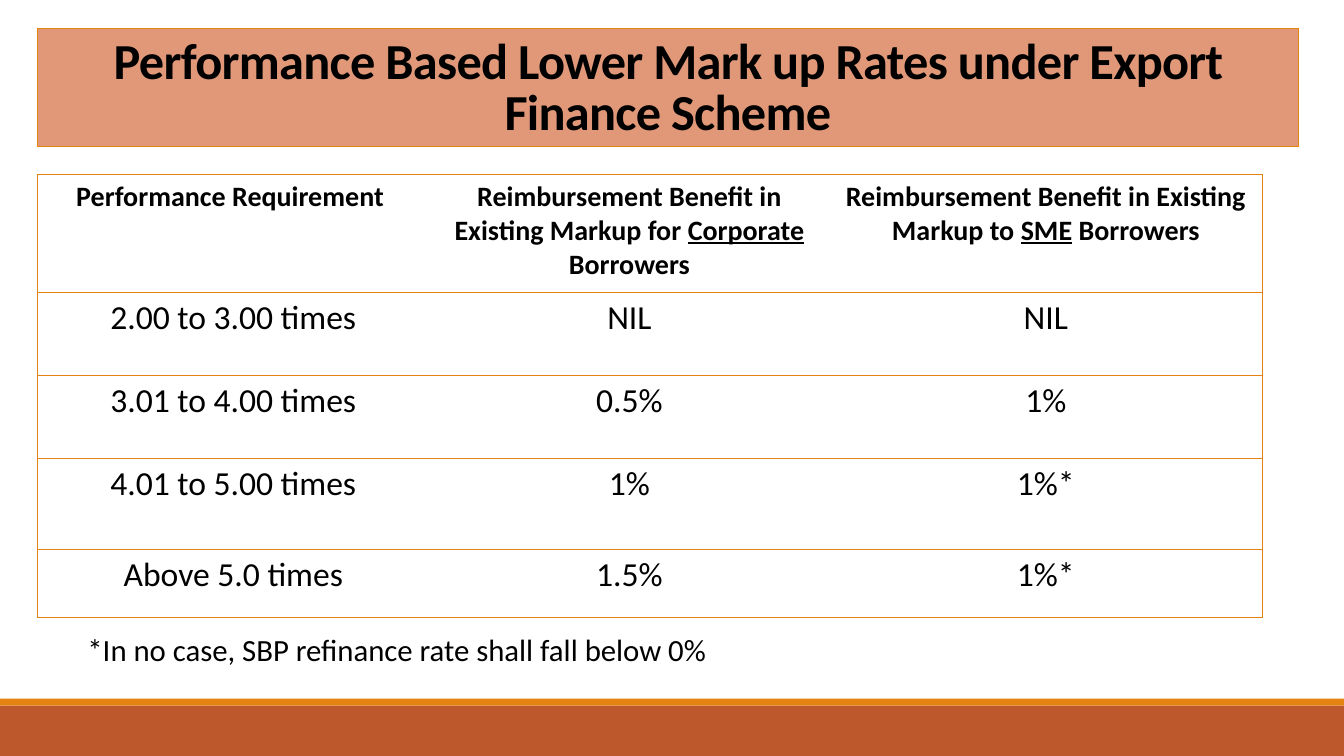
from lxml.etree import SubElement
from pptx import Presentation
from pptx.dml.color import RGBColor
from pptx.enum.shapes import MSO_SHAPE
from pptx.enum.text import MSO_ANCHOR, MSO_AUTO_SIZE, PP_ALIGN
from pptx.oxml.ns import qn
from pptx.util import Pt

ORANGE, RUST, SALMON = "E48312", "BD582C", "E09878"
BLACK, WHITE = "000000", "FFFFFF"


def paint(color_format, color):
    color_format.rgb = RGBColor.from_string(color)


def add_border(cell, side, color=None):
    """Draw a 1 pt line on one cell side (L, R, T, B), or none without a colour."""
    border = SubElement(cell._tc.get_or_add_tcPr(), qn(f"a:ln{side}"), w="12700")
    if color:
        fill = SubElement(border, qn("a:solidFill"))
        SubElement(fill, qn("a:srgbClr"), val=color)
    else:
        SubElement(border, qn("a:noFill"))


prs = Presentation()
prs.slide_width, prs.slide_height = Pt(960), Pt(540)
slide = prs.slides.add_slide(prs.slide_layouts[5])

# Footer bands
for top, height, color in [(504, 36, RUST), (499, 5, ORANGE)]:
    band = slide.shapes.add_shape(MSO_SHAPE.RECTANGLE, 0, Pt(top), Pt(960), Pt(height))
    band.shadow.inherit = False
    band.fill.solid()
    paint(band.fill.fore_color, color)
    band.line.fill.background()

# Heading
heading = slide.shapes.title
heading.left, heading.top, heading.width, heading.height = Pt(26.6), Pt(20.2), Pt(901), Pt(84.2)
heading.fill.solid()
paint(heading.fill.fore_color, SALMON)
paint(heading.line.color, ORANGE)
heading.line.width = Pt(0.75)
heading.text_frame.text = "Performance Based Lower Mark up Rates under Export Finance Scheme"
heading.text_frame.vertical_anchor = MSO_ANCHOR.BOTTOM
heading.text_frame.auto_size = MSO_AUTO_SIZE.NONE
heading_line = heading.text_frame.paragraphs[0]
heading_line.alignment = PP_ALIGN.CENTER
heading_line.line_spacing = 0.85
heading_line.font.size = Pt(36)
heading_line.font.bold = True
heading_line.font.name = "Calibri"
paint(heading_line.font.color, BLACK)
heading_line.runs[0].font._element.set("spc", "-50")

# Rates table: each cell is a list of runs, the second of which is underlined
rates = [
    [["Performance Requirement "],
     ["Reimbursement Benefit in Existing Markup for ", "Corporate", " Borrowers"],
     ["Reimbursement Benefit in Existing Markup to ", "SME", " Borrowers"]],
    [["2.00 to 3.00 times"], ["NIL"], ["NIL"]],
    [["3.01 to 4.00 times"], ["0.5%"], ["1%"]],
    [["4.01 to 5.00 times"], ["1%"], ["1%*"]],
    [["Above 5.0 times"], ["1.5%"], ["1%*"]],
]
column_widths = [280.1, 285.8, 309.1]
row_heights = [84.3, 59.3, 59.3, 65, 48.9]
table = slide.shapes.add_table(len(row_heights), len(column_widths), Pt(26.6), Pt(124.5),
                               Pt(sum(column_widths)), Pt(sum(row_heights))).table
table.first_row = table.horz_banding = False
for column, width in zip(table.columns, column_widths):
    column.width = Pt(width)
for row, height in zip(table.rows, row_heights):
    row.height = Pt(height)

for r, row in enumerate(rates):
    for c, pieces in enumerate(row):
        cell = table.cell(r, c)
        add_border(cell, "L", ORANGE if c == 0 else None)
        add_border(cell, "R", ORANGE if c == len(row) - 1 else None)
        add_border(cell, "T", ORANGE)
        add_border(cell, "B", ORANGE)
        cell.fill.solid()
        paint(cell.fill.fore_color, WHITE)
        entry = cell.text_frame.paragraphs[0]
        entry.alignment = PP_ALIGN.CENTER
        entry.font.name = "Calibri"
        entry.font.size = Pt(20 if r == 0 else 24)
        entry.font.bold = r == 0
        paint(entry.font.color, BLACK)
        for i, piece in enumerate(pieces):
            run = entry.add_run()
            run.text = piece
            if i == 1:
                run.font.underline = True

# Footnote
footnote = slide.shapes.add_textbox(Pt(55.4), Pt(447.1), Pt(634.3), Pt(33.8))
footnote.fill.solid()
paint(footnote.fill.fore_color, WHITE)
footnote.text_frame.word_wrap = True
footnote.text_frame.auto_size = MSO_AUTO_SIZE.SHAPE_TO_FIT_TEXT
footnote.text_frame.text = "*In no case, SBP refinance rate shall fall below 0%"
footnote_line = footnote.text_frame.paragraphs[0]
footnote_line.font.name = "Calibri"
footnote_line.font.size = Pt(22)
paint(footnote_line.font.color, BLACK)

prs.save("out.pptx")
